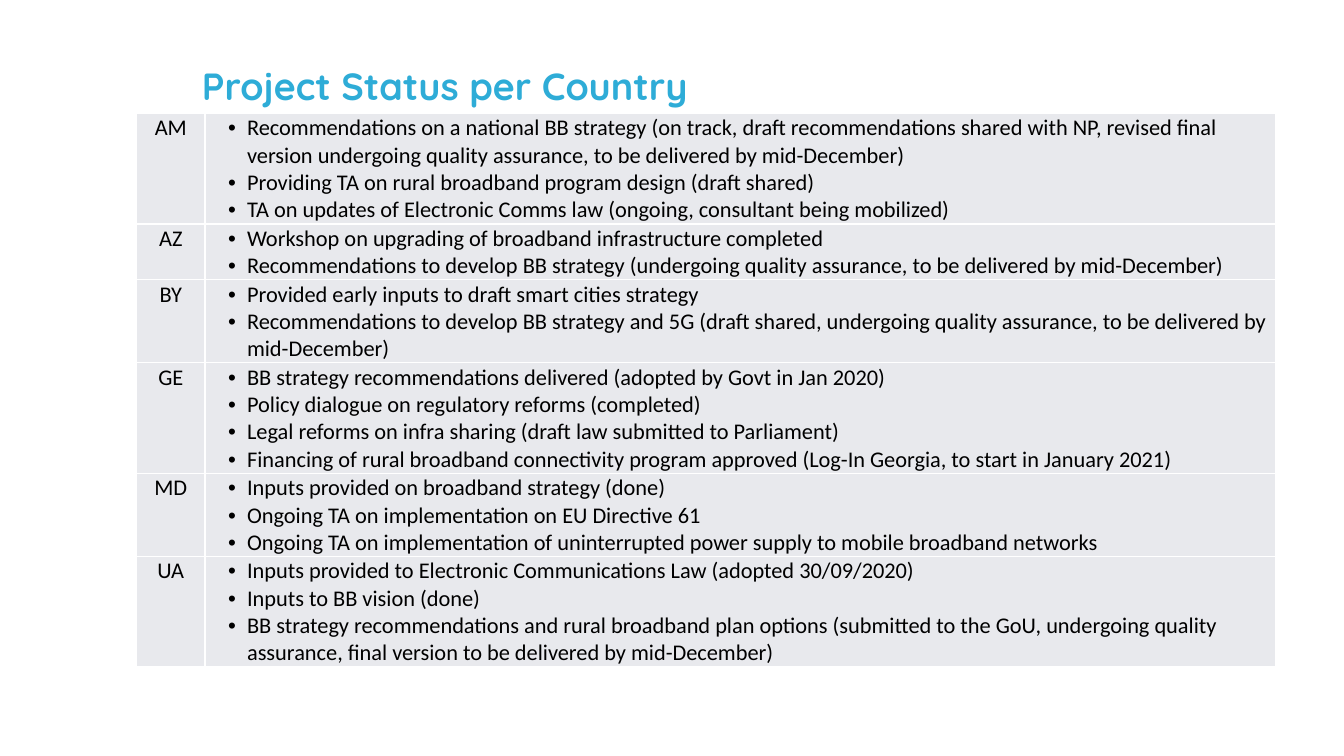
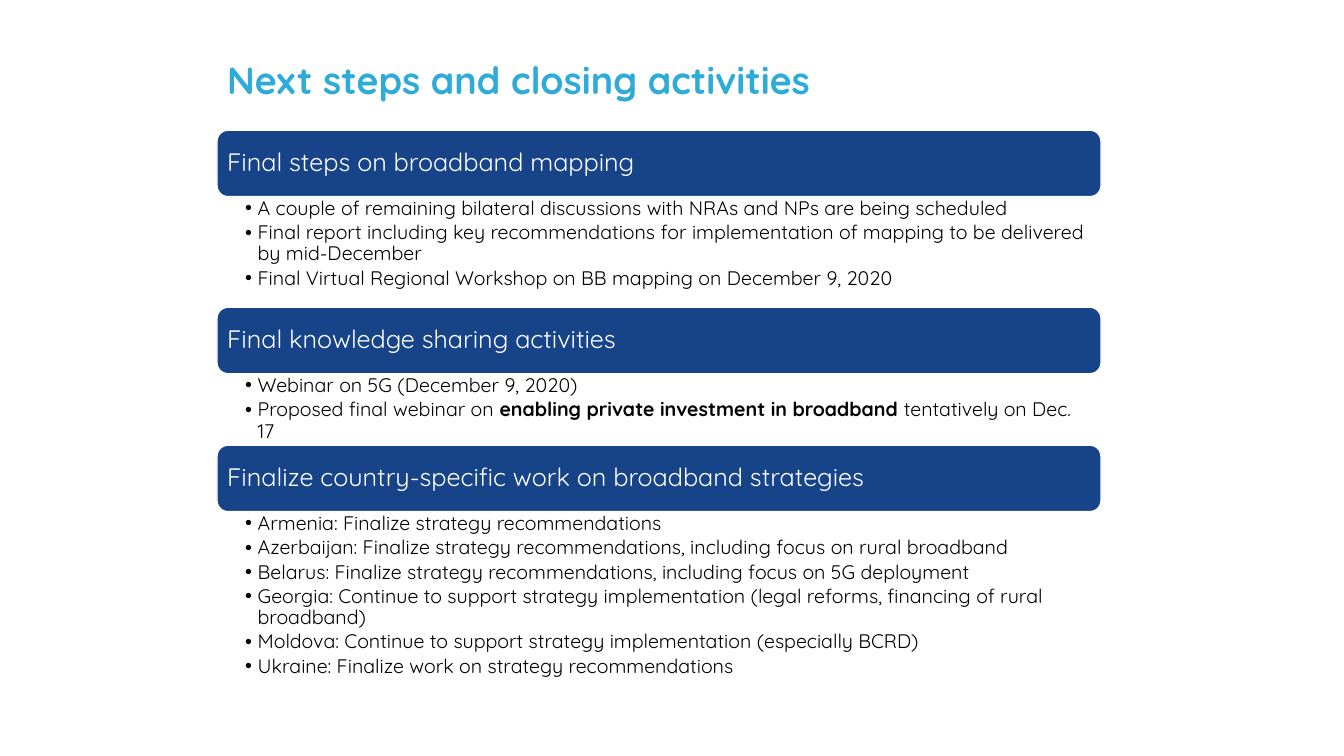
from lxml.etree import SubElement
from pptx import Presentation
from pptx.dml.color import RGBColor
from pptx.enum.shapes import MSO_SHAPE
from pptx.enum.text import MSO_ANCHOR, MSO_AUTO_SIZE, PP_ALIGN
from pptx.oxml.ns import qn
from pptx.util import Pt

BLACK, WHITE = "000000", "FFFFFF"
TITLE_BLUE, BAND_BLUE, CELL_GREY = "2EACD7", "174489", "E8E9ED"
HEADING_FONT, TABLE_FONT = "Quicksand", "Calibri"
TITLE_ONLY, COMPARISON = 5, 4


def colour(value):
    return RGBColor.from_string(value)


def paint(fill, value):
    fill.solid()
    fill.fore_color.rgb = colour(value)


def place(shape, left, top, width, height):
    shape.left, shape.top = Pt(left), Pt(top)
    shape.width, shape.height = Pt(width), Pt(height)


def set_margins(target, left, top, right, bottom):
    target.margin_left, target.margin_top = Pt(left), Pt(top)
    target.margin_right, target.margin_bottom = Pt(right), Pt(bottom)


def style(paragraph, font, size, value, bold=False, align=PP_ALIGN.LEFT):
    paragraph.alignment = align
    paragraph.font.name, paragraph.font.size = font, Pt(size)
    paragraph.font.bold = bold
    paragraph.font.color.rgb = colour(value)


def add_bullet(paragraph, indent):
    props = paragraph._p.get_or_add_pPr()
    props.set("marL", str(Pt(indent)))
    props.set("indent", str(-Pt(indent)))
    SubElement(props, qn("a:buFont"), typeface="Arial")
    SubElement(props, qn("a:buChar"), char="•")


def paragraphs(frame, items):
    """Yield one paragraph per item, starting with the frame's own first one."""
    for number, item in enumerate(items):
        yield frame.add_paragraph() if number else frame.paragraphs[0], item


class Deck:
    def __init__(self):
        self.presentation = Presentation()
        self.presentation.slide_width = Pt(960)
        self.presentation.slide_height = Pt(540)
        self.slide = None

    def new_slide(self, layout, title, left, top, width):
        self.slide = self.presentation.slides.add_slide(
            self.presentation.slide_layouts[layout])
        heading = self.slide.shapes.title
        place(heading, left, top, width, 41)
        frame = heading.text_frame
        frame.auto_size = MSO_AUTO_SIZE.NONE
        frame.vertical_anchor = MSO_ANCHOR.TOP
        frame.text = title
        style(frame.paragraphs[0], HEADING_FONT, 27, TITLE_BLUE, bold=True)

    def band(self, text, left, top, width, height):
        band = self.slide.shapes.add_shape(
            MSO_SHAPE.ROUNDED_RECTANGLE, Pt(left), Pt(top), Pt(width), Pt(height))
        band.shadow.inherit = False
        paint(band.fill, BAND_BLUE)
        band.line.color.rgb = colour(WHITE)
        band.line.width = Pt(1)
        frame = band.text_frame
        frame.word_wrap = True
        frame.vertical_anchor = MSO_ANCHOR.MIDDLE
        set_margins(frame, 5, 5, 5, 5)
        frame.text = text
        frame.paragraphs[0].line_spacing = 0.9
        style(frame.paragraphs[0], HEADING_FONT, 18, WHITE)

    def bullet_list(self, body, items, left, top, width, height):
        """Each item is a tuple of runs; every second run is bold."""
        place(body, left, top, width, height)
        frame = body.text_frame
        frame.auto_size = MSO_AUTO_SIZE.NONE
        frame.vertical_anchor = MSO_ANCHOR.TOP
        set_margins(frame, 20, 1.3, 8, 1.3)
        for paragraph, runs in paragraphs(frame, items):
            add_bullet(paragraph, 9)
            paragraph.line_spacing = 0.9
            paragraph.space_before, paragraph.space_after = Pt(0), Pt(2.2)
            style(paragraph, HEADING_FONT, 14, BLACK)
            for position, text in enumerate(runs):
                run = paragraph.add_run()
                run.text = text
                if position % 2:
                    run.font.bold = True

    def drop_empty_placeholders(self):
        for holder in list(self.slide.placeholders):
            if not holder.text_frame.text:
                holder._element.getparent().remove(holder._element)

    def cell(self, cell, left_margin):
        set_margins(cell, left_margin, 0.7, 0.7, 0)
        props = cell._tc.get_or_add_tcPr()
        for side in ("lnL", "lnR", "lnT", "lnB"):
            border = SubElement(props, qn(f"a:{side}"), w=str(Pt(1)))
            SubElement(SubElement(border, qn("a:solidFill")), qn("a:srgbClr"), val=WHITE)
        paint(cell.fill, CELL_GREY)

    def status_table(self, rows, left, top, widths, line_height):
        """Each row is (code, number of text lines, bullet items)."""
        height = line_height * sum(lines for _, lines, _ in rows)
        table = self.slide.shapes.add_table(
            len(rows), len(widths), Pt(left), Pt(top), Pt(sum(widths)), Pt(height)).table
        table.first_row = table.horz_banding = False
        for column, width in zip(table.columns, widths):
            column.width = Pt(width)
        for row, (code, lines, items) in zip(table.rows, rows):
            row.height = Pt(line_height * lines)
            country, status = row.cells
            self.cell(country, 0.7)
            country.text = code
            style(country.text_frame.paragraphs[0], TABLE_FONT, 16, BLACK,
                  align=PP_ALIGN.CENTER)
            self.cell(status, 16.5)
            for paragraph, item in paragraphs(status.text_frame, items):
                add_bullet(paragraph, 13.5)
                paragraph.text = item
                style(paragraph, TABLE_FONT, 16, BLACK)


COUNTRY_STATUS = [
    ("AM", 4, [
        "Recommendations on a national BB strategy (on track, draft recommendations shared "
        "with NP, revised final version undergoing quality assurance, to be delivered by "
        "mid-December)",
        "Providing TA on rural broadband program design (draft shared)",
        "TA on updates of Electronic Comms law (ongoing, consultant being mobilized)"]),
    ("AZ", 2, [
        "Workshop on upgrading of broadband infrastructure completed",
        "Recommendations to develop BB strategy (undergoing quality assurance, to be "
        "delivered by mid-December)"]),
    ("BY", 3, [
        "Provided early inputs to draft smart cities strategy",
        "Recommendations to develop BB strategy and 5G (draft shared, undergoing quality "
        "assurance, to be delivered by mid-December)"]),
    ("GE", 4, [
        "BB strategy recommendations delivered (adopted by Govt in Jan 2020)",
        "Policy dialogue on regulatory reforms (completed)",
        "Legal reforms on infra sharing (draft law submitted to Parliament)",
        "Financing of rural broadband connectivity program approved (Log-In Georgia, to "
        "start in January 2021)"]),
    ("MD", 3, [
        "Inputs provided on broadband strategy (done)",
        "Ongoing TA on implementation on EU Directive 61",
        "Ongoing TA on implementation of uninterrupted power supply to mobile broadband "
        "networks"]),
    ("UA", 4, [
        "Inputs provided to Electronic Communications Law (adopted 30/09/2020)",
        "Inputs to BB vision (done)",
        "BB strategy recommendations and rural broadband plan options (submitted to the "
        "GoU, undergoing quality assurance, final version to be delivered by "
        "mid-December)"]),
]

# Band text, height of the list below it, list items
NEXT_STEPS = [
    ("Final steps on broadband mapping", 79, [
        ("A couple of remaining bilateral discussions with NRAs and NPs are being scheduled",),
        ("Final report including key recommendations for implementation of mapping to be "
         "delivered by mid-December",),
        ("Final Virtual Regional Workshop on BB mapping on December 9, 2020",)]),
    ("Final knowledge sharing activities", 51, [
        ("Webinar on 5G (December 9, 2020)",),
        ("Proposed final webinar on ", "enabling private investment in broadband",
         " tentatively on Dec. 17")]),
    ("Finalize country-specific work on broadband strategies", 114.5, [
        ("Armenia: Finalize strategy recommendations",),
        ("Azerbaijan: Finalize strategy recommendations, including focus on rural broadband",),
        ("Belarus: Finalize strategy recommendations, including focus on 5G deployment",),
        ("Georgia: Continue to support strategy implementation (legal reforms, financing of "
         "rural broadband)",),
        ("Moldova: Continue to support strategy implementation (especially BCRD)",),
        ("Ukraine: Finalize work on strategy recommendations",)]),
]


def main():
    deck = Deck()

    # Status per country
    deck.new_slide(TITLE_ONLY, "Project Status per Country", 137, 41, 590)
    deck.status_table(COUNTRY_STATUS, 97.5, 81, (49, 764.5), 19.3)

    # Next steps: bands with a list under each
    left, top, width, band_height = 155, 93, 631.5, 47.5
    deck.new_slide(COMPARISON, "Next steps and closing activities", left, 36.7, 509)
    bodies = list(deck.slide.placeholders)[1:]
    for body, (heading, list_height, items) in zip(bodies, NEXT_STEPS):
        deck.band(heading, left, top, width, band_height)
        top += band_height
        deck.bullet_list(body, items, left, top, width, list_height)
        top += list_height
    deck.drop_empty_placeholders()

    deck.presentation.save("out.pptx")


if __name__ == "__main__":
    main()
